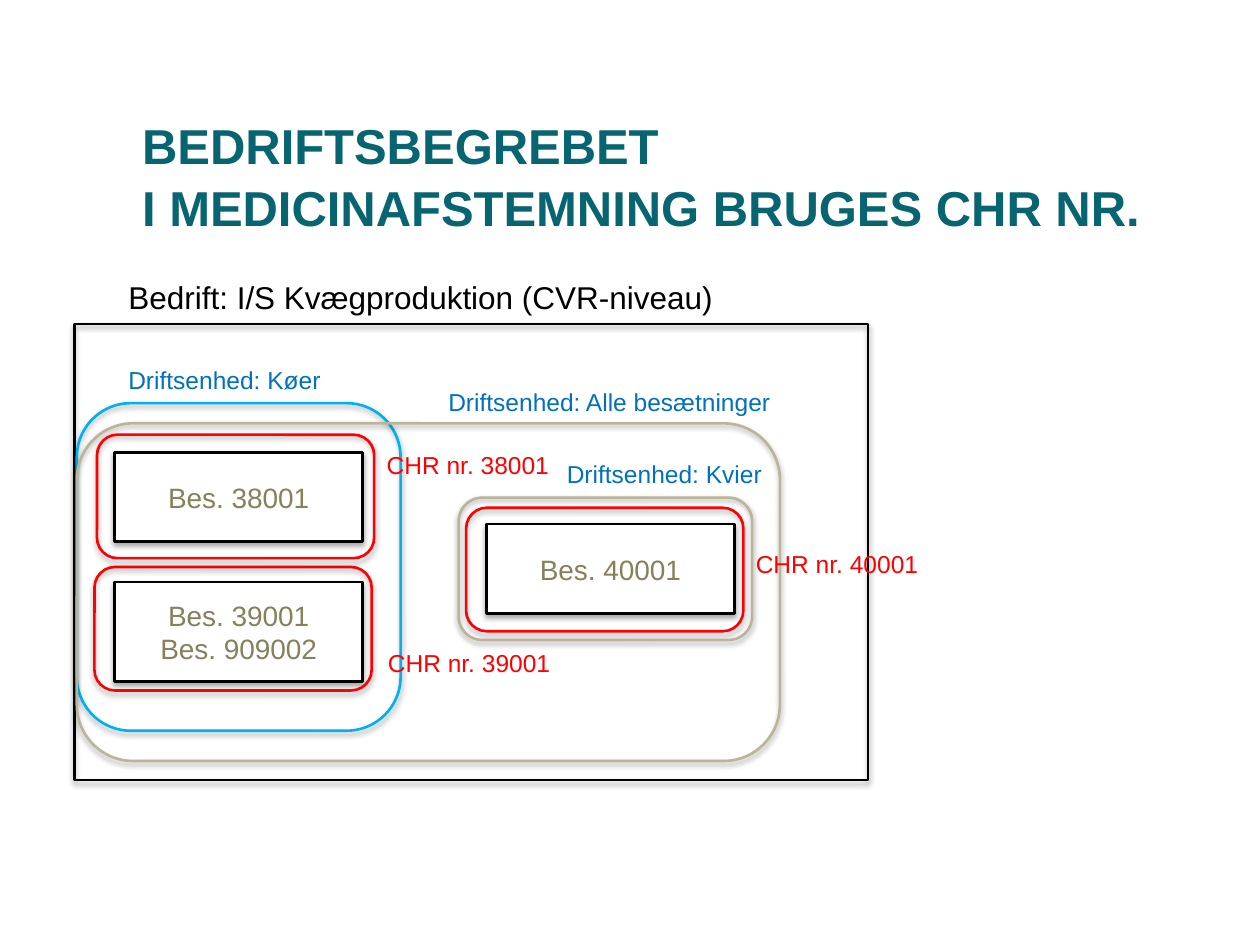
from dataclasses import dataclass

import pptx
import pptx.dml.color
import pptx.enum.shapes
import pptx.enum.text
import pptx.oxml
import pptx.oxml.ns
import pptx.util

RGBColor = pptx.dml.color.RGBColor
Kind = pptx.enum.shapes.MSO_SHAPE
Anchor = pptx.enum.text.MSO_ANCHOR
Align = pptx.enum.text.PP_ALIGN

EMU_PER_PX = 9144  # 100 px to the inch
FONT = "Arial"

BLACK = RGBColor(0x00, 0x00, 0x00)
WHITE = RGBColor(0xFF, 0xFF, 0xFF)
TEAL = RGBColor(0x07, 0x64, 0x71)
OLIVE = RGBColor(0x87, 0x80, 0x5A)
SAND = RGBColor(0xBA, 0xB4, 0x98)
CYAN = RGBColor(0x00, 0xB0, 0xF0)
BLUE = RGBColor(0x00, 0x70, 0xC0)
RED = RGBColor(0xFF, 0x00, 0x00)

SHADOW_XML = (
    f'<a:effectLst {pptx.oxml.ns.nsdecls("a")}>'
    '<a:outerShdw blurRad="40000" dist="23000" dir="5400000" rotWithShape="0">'
    '<a:srgbClr val="000000"><a:alpha val="35000"/></a:srgbClr>'
    '</a:outerShdw></a:effectLst>'
)


@dataclass(frozen=True)
class Frame:
    left: int
    top: int
    width: int
    height: int
    color: RGBColor = BLACK
    kind: Kind = Kind.ROUNDED_RECTANGLE
    lines: tuple[str, ...] = ()


@dataclass(frozen=True)
class Label:
    left: int
    top: int
    width: int
    text: str
    color: RGBColor
    height: int = 34
    size: int = 14
    wrap: bool = False


def px(length: int) -> pptx.util.Emu:
    return pptx.util.Emu(length * EMU_PER_PX)


def add_span(para, text: str, size: int, color: RGBColor, bold: bool = False) -> None:
    span = para.add_run()
    span.text = text
    span.font.name = FONT
    span.font.size = pptx.util.Pt(size)
    span.font.bold = bold
    span.font.color.rgb = color


def draw_title(page, lines: tuple[str, str]) -> None:
    box = page.shapes.add_textbox(px(103), px(76), px(844), px(125))
    box.text_frame.word_wrap = True
    box.text_frame.vertical_anchor = Anchor.MIDDLE
    para = box.text_frame.paragraphs[0]
    para.line_spacing = 1.05
    add_span(para, lines[0], 28, TEAL, bold=True)
    para.add_line_break()
    add_span(para, lines[1], 28, TEAL, bold=True)


def draw_frame(page, frame: Frame) -> None:
    box = page.shapes.add_shape(
        frame.kind, px(frame.left), px(frame.top), px(frame.width), px(frame.height))
    box.line.color.rgb = frame.color
    box.line.width = pptx.util.Pt(1.5)
    if frame.lines:
        box.fill.solid()
        box.fill.fore_color.rgb = WHITE
    else:
        box.fill.background()
    box.shadow.inherit = False
    properties = box._element.spPr
    properties.replace(properties.find(pptx.oxml.ns.qn("a:effectLst")),
                       pptx.oxml.parse_xml(SHADOW_XML))

    box.text_frame.vertical_anchor = Anchor.MIDDLE
    for index, line in enumerate(frame.lines):
        para = box.text_frame.add_paragraph() if index else box.text_frame.paragraphs[0]
        para.alignment = Align.CENTER
        add_span(para, line, 16, OLIVE)


def draw_label(page, label: Label) -> None:
    box = page.shapes.add_textbox(
        px(label.left), px(label.top), px(label.width), px(label.height))
    box.text_frame.word_wrap = label.wrap
    box.text_frame.auto_size = pptx.enum.text.MSO_AUTO_SIZE.SHAPE_TO_FIT_TEXT
    add_span(box.text_frame.paragraphs[0], label.text, label.size, label.color)


FRAMES = (
    # Herds
    Frame(91, 359, 197, 71, kind=Kind.RECTANGLE, lines=("Bes. 38001",)),
    Frame(91, 462, 197, 79, kind=Kind.RECTANGLE, lines=("Bes. 39001", "Bes. 909002")),
    Frame(386, 416, 197, 71, kind=Kind.RECTANGLE, lines=("Bes. 40001",)),
    # Company
    Frame(59, 257, 630, 362, kind=Kind.RECTANGLE),
    # Operating units: cows, all herds
    Frame(61, 320, 257, 260, CYAN),
    Frame(61, 336, 558, 268, SAND),
    # CHR numbers
    Frame(75, 450, 220, 98, RED),
    Frame(77, 345, 220, 98, RED),
    Frame(370, 403, 220, 98, RED),
    # Operating unit: heifers
    Frame(364, 395, 233, 113, SAND),
)

LABELS = (
    Label(92, 216, 502, "Bedrift: I/S Kvægproduktion (CVR-niveau)", BLACK,
          height=40, size=18, wrap=True),
    Label(92, 285, 203, "Driftsenhed: Køer", BLUE, wrap=True),
    Label(346, 302, 277, "Driftsenhed: Alle besætninger", BLUE),
    Label(440, 359, 181, "Driftsenhed: Kvier", BLUE),
    Label(298, 509, 150, "CHR nr. 39001", RED),
    Label(297, 352, 150, "CHR nr. 38001", RED),
    Label(590, 431, 150, "CHR nr. 40001", RED),
)


def main() -> None:
    deck = pptx.Presentation()
    deck.slide_width, deck.slide_height = px(1000), px(750)
    page = deck.slides.add_slide(deck.slide_layouts[6])

    draw_title(page, ("BEDRIFTSBEGREBET", "I MEDICINAFSTEMNING BRUGES CHR NR."))
    for frame in FRAMES:
        draw_frame(page, frame)
    for label in LABELS:
        draw_label(page, label)

    deck.save("out.pptx")


if __name__ == "__main__":
    main()
